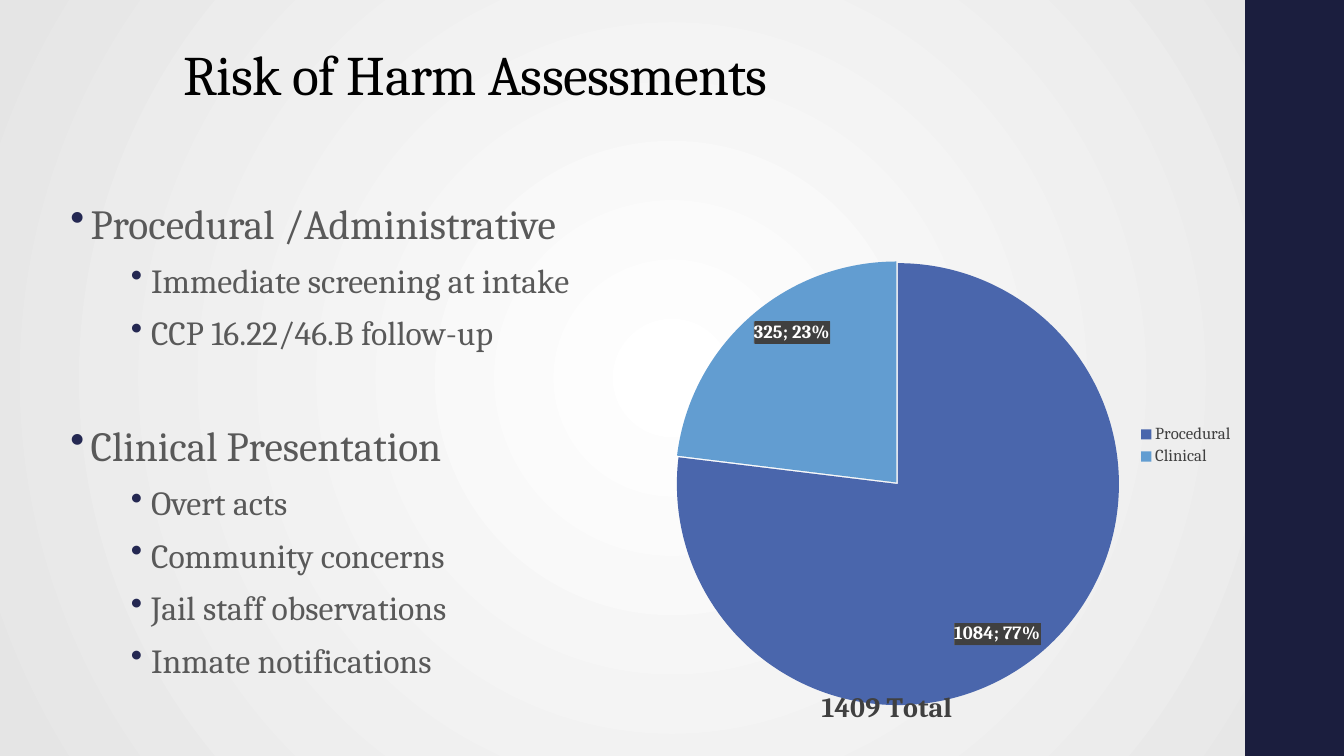
from lxml import etree
from pptx import Presentation
from pptx import util as u
from pptx.chart.data import CategoryChartData
from pptx.dml.color import RGBColor
from pptx.enum import chart as charts, shapes, text
from pptx.oxml import parse_xml
from pptx.oxml.ns import nsdecls, qn

FACE = "Cambria"
OUTLINE = [
    ("Procedural /Administrative", ["Immediate screening at intake", "CCP 16.22/46.B follow-up"]),
    ("Clinical Presentation", ["Overt acts", "Community concerns",
                               "Jail staff observations", "Inmate notifications"]),
]
LEVELS = {
    "heading": {"size": 29.6, "margin": 0.8, "line": 45},
    "item": {"size": 24.1, "margin": 1.4, "line": 37.5},
}
ASSESSMENTS = {"Procedural": (1084, "4A66AC"), "Clinical": (325, "629DD1")}


def rgb(value):
    """Return the colour for a hex string."""
    return RGBColor.from_string(value)


def set_font(font, size, color, bold=False):
    """Apply the slide's typeface with a size, colour and weight."""
    for name, value in {"name": FACE, "size": u.Pt(size), "bold": bold}.items():
        setattr(font, name, value)
    font.color.rgb = rgb(color)


def set_background(slide):
    """Fill the background with a gradient radiating from the centre."""
    fill = slide.background.fill
    fill.gradient()
    for stop, (position, color) in zip(fill.gradient_stops, [(0, "FFFFFF"), (1, "E5E5E5")]):
        stop.position = position
        stop.color.rgb = rgb(color)
    linear = next(slide.background._cSld.iter(qn("a:lin")))
    linear.getparent().replace(linear, parse_xml(
        f'<a:path {nsdecls("a")} path="circle">'
        '<a:fillToRect l="50000" t="50000" r="50000" b="50000"/></a:path>'))


def add_sidebar(slide, left, top, width, height):
    """Draw the dark band along the right edge."""
    band = slide.shapes.add_shape(shapes.MSO_SHAPE.RECTANGLE, left, top, width, height)
    band.shadow.inherit = False
    band.fill.solid()
    band.fill.fore_color.rgb = rgb("1B1E3E")
    band.line.fill.background()


def add_title(slide, left, top, width, height):
    """Place and format the slide title."""
    title = slide.shapes.title
    for name, value in {"left": left, "top": top, "width": width, "height": height}.items():
        setattr(title, name, value)
    frame = title.text_frame
    frame.text = "Risk of Harm Assessments"
    frame.vertical_anchor = text.MSO_ANCHOR.MIDDLE
    paragraph = frame.paragraphs[0]
    paragraph.alignment = text.PP_ALIGN.CENTER
    run = paragraph.runs[0]
    set_font(run.font, 39.8, "000000")
    run.font._element.set("spc", "-50")


def add_bullet(paragraph, wording, level, space_before=0):
    """Write one bulleted line in the style of its level."""
    style = LEVELS[level]
    run = paragraph.add_run()
    run.text = wording
    set_font(run.font, style["size"], "595959")
    paragraph.line_spacing = u.Pt(style["line"])
    paragraph.space_before = u.Pt(space_before)
    properties = paragraph._p.get_or_add_pPr()
    properties.set("marL", str(u.Inches(style["margin"])))
    properties.set("indent", str(u.Inches(-0.2)))
    color = etree.SubElement(properties, qn("a:buClr"))
    etree.SubElement(color, qn("a:srgbClr"), val="242852")
    etree.SubElement(properties, qn("a:buChar"), char="•")


def add_outline(slide, left, top, width, height):
    """Write the two groups of bullets."""
    frame = slide.shapes.add_textbox(left, top, width, height).text_frame
    frame.word_wrap = True
    for index, (heading, items) in enumerate(OUTLINE):
        paragraph = frame.add_paragraph() if index else frame.paragraphs[0]
        add_bullet(paragraph, heading, "heading", 39 if index else 0)
        for item in items:
            add_bullet(frame.add_paragraph(), item, "item")


def layout_xml(x, y, width=None, height=None, inner=False):
    """Return a manual chart layout in fractions of the chart."""
    values = {"x": x, "y": y, "w": width, "h": height}
    target = '<c:layoutTarget val="inner"/>' if inner else ""
    modes = '<c:xMode val="edge"/><c:yMode val="edge"/>'
    sizes = "".join(f'<c:{key} val="{value}"/>' for key, value in values.items() if value is not None)
    return parse_xml(f'<c:layout {nsdecls("c")}><c:manualLayout>{target}{modes}{sizes}'
                     '</c:manualLayout></c:layout>')


def set_layout(element, layout, after=None):
    """Put a layout into a chart part, after the named child if given."""
    for old in element.findall(qn("c:layout")):
        element.remove(old)
    if after is None:
        element.insert(0, layout)
    else:
        element.find(qn(after)).addnext(layout)


def format_labels(labels):
    """Show value and share on a dark striped ground."""
    settings = {"show_value": True, "show_percentage": True,
                "position": charts.XL_LABEL_POSITION.INSIDE_END}
    for name, value in settings.items():
        setattr(labels, name, value)
    set_font(labels.font, 13.3, "FFFFFF", True)
    element = labels._element
    element.find(qn("c:txPr")).addprevious(parse_xml(
        f'<c:spPr {nsdecls("c", "a")}><a:pattFill prst="dkVert">'
        '<a:fgClr><a:srgbClr val="404040"/></a:fgClr>'
        '<a:bgClr><a:srgbClr val="595959"/></a:bgClr></a:pattFill></c:spPr>'))
    separator = etree.Element(qn("c:separator"))
    separator.text = "; "
    element.find(qn("c:showPercent")).addnext(separator)
    bubble = element.find(qn("c:showBubbleSize"))
    if bubble is not None:
        separator.addprevious(bubble)


def add_pie(slide, left, top, width, height):
    """Chart the assessments by type, with the total beneath."""
    data = CategoryChartData()
    data.categories = list(ASSESSMENTS)
    data.add_series("Series 1", [count for count, _ in ASSESSMENTS.values()])
    chart = slide.shapes.add_chart(
        charts.XL_CHART_TYPE.PIE, left, top, width, height, data).chart
    set_font(chart.font, 10, "000000")

    chart.has_title = True
    title = chart.chart_title
    title.text_frame.text = "1409 Total"
    set_font(title.text_frame.paragraphs[0].runs[0].font, 20, "404040", True)
    set_layout(title._element, layout_xml(0.27, 0.9), "c:tx")

    chart.has_legend = True
    chart.legend.position = charts.XL_LEGEND_POSITION.RIGHT
    chart.legend.include_in_layout = False
    set_font(chart.legend.font, 12, "404040")
    set_layout(chart.legend._element, layout_xml(0.82, 0.46, 0.17, 0.08), "c:legendPos")

    plot = chart.plots[0]
    plot.vary_by_categories = True
    series = plot.series[0]
    for index, (_, color) in enumerate(ASSESSMENTS.values()):
        shape_format = series.points[index].format
        shape_format.fill.solid()
        shape_format.fill.fore_color.rgb = rgb(color)
        shape_format.line.fill.background()
    clinical = series._element.findall(qn("c:dPt"))[1]
    clinical.find(qn("c:idx")).addnext(parse_xml(f'<c:explosion {nsdecls("c")} val="1"/>'))
    format_labels(series.data_labels)
    plot_area = next(chart._chartSpace.iter(qn("c:plotArea")))
    set_layout(plot_area, layout_xml(0.03, 0.19, 0.76, 0.75, inner=True))


def main():
    """Build and save the slide."""
    presentation = Presentation()
    presentation.slide_width = u.Inches(13.33)
    presentation.slide_height = u.Inches(7.5)
    slide = presentation.slides.add_slide(presentation.slide_layouts[5])
    set_background(slide)
    regions = [
        (add_sidebar, (12.35, 0, 0.98, 7.5)),
        (add_title, (0, 0.3, 9.43, 0.85)),
        (add_outline, (0, 1.78, 6.5, 5.2)),
        (add_pie, (6.54, 1.47, 5.77, 5.9)),
    ]
    for add_region, box in regions:
        add_region(slide, *map(u.Inches, box))
    presentation.save("out.pptx")


if __name__ == "__main__":
    main()
